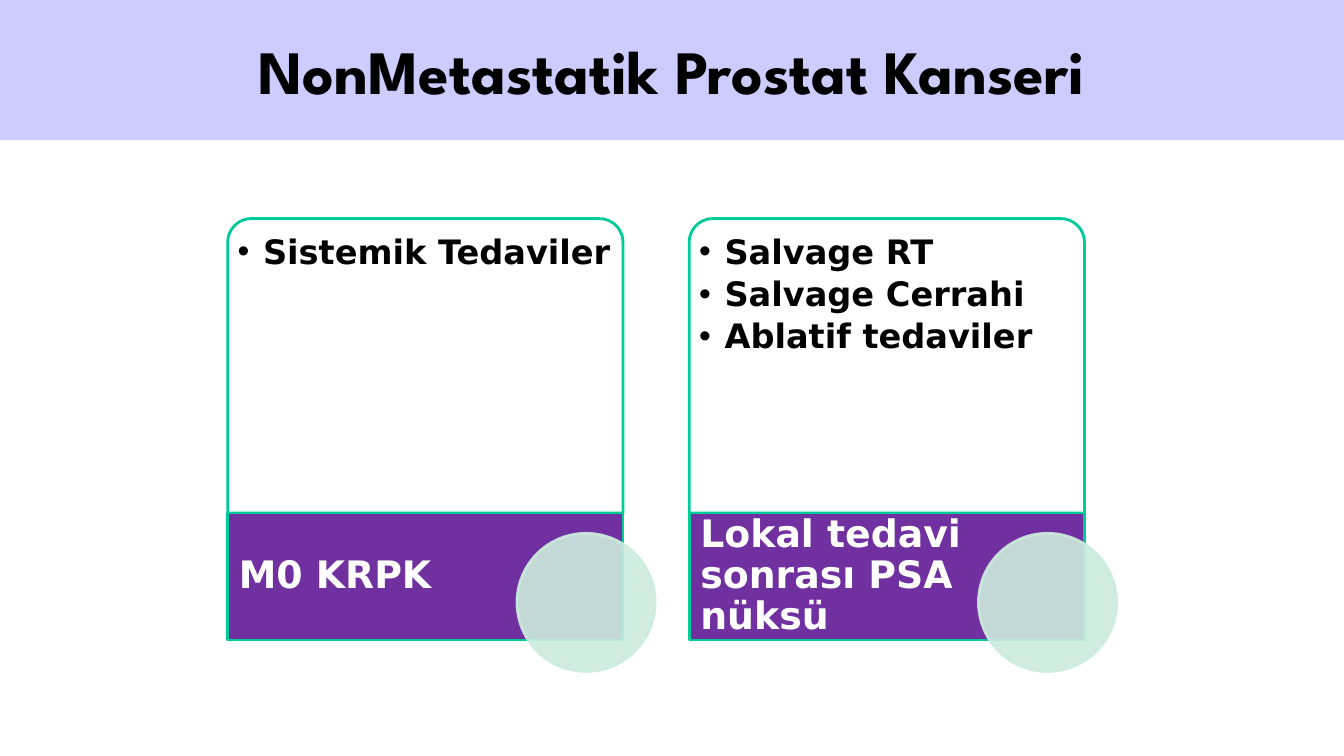
from lxml import etree
from pptx import Presentation
from pptx.dml.color import RGBColor
from pptx.enum.shapes import MSO_SHAPE
from pptx.enum.text import MSO_ANCHOR, PP_ALIGN
from pptx.oxml.ns import qn
from pptx.util import Cm, Pt

RECTANGLE = MSO_SHAPE.RECTANGLE
ROUNDED_TOP = MSO_SHAPE.ROUND_2_SAME_RECTANGLE
CIRCLE = MSO_SHAPE.OVAL
TOP, MIDDLE = MSO_ANCHOR.TOP, MSO_ANCHOR.MIDDLE
LEFT, CENTER = PP_ALIGN.LEFT, PP_ALIGN.CENTER

BLACK = RGBColor(0x00, 0x00, 0x00)
WHITE = RGBColor(0xFF, 0xFF, 0xFF)
LAVENDER = RGBColor(0xCC, 0xCC, 0xFF)
PURPLE = RGBColor(0x70, 0x30, 0xA0)
GREEN = RGBColor(0x00, 0xCC, 0x99)
MINT = RGBColor(0xCC, 0xEC, 0xDE)

TITLE_FONT = "League Spartan"
BODY_FONT = "DejaVu Sans"

# Card geometry in centimetres
FIRST_LEFT, CARD_STEP = 5.74, 11.63
CARD_TOP, CARD_WIDTH, CARD_HEIGHT = 5.51, 9.96, 7.42
LABEL_TOP, LABEL_HEIGHT = CARD_TOP + CARD_HEIGHT, 3.2

CARDS = [
    ("M0 KRPK", ["Sistemik Tedaviler"]),
    ("Lokal tedavi sonrası PSA nüksü",
     ["Salvage RT", "Salvage Cerrahi", "Ablatif tedaviler"]),
]


def set_alpha(fill_parent, percent):
    color = fill_parent.find(qn("a:solidFill"))[0]
    etree.SubElement(color, qn("a:alpha")).set("val", str(percent * 1000))


def add_shape(page, kind, place, fill, line=None):
    shape = page.shapes.add_shape(kind, *map(Cm, place))
    shape.shadow.inherit = False
    shape.fill.solid()
    shape.fill.fore_color.rgb = fill
    if line is None:
        shape.line.fill.background()
    else:
        shape.line.color.rgb = line
        shape.line.width = Pt(2)
    return shape


def set_bullet(para):
    properties = para._p.get_or_add_pPr()
    properties.set("marL", str(Cm(0.64)))
    properties.set("indent", str(-Cm(0.64)))
    etree.SubElement(properties, qn("a:buFont")).set("typeface", "Arial")
    etree.SubElement(properties, qn("a:buChar")).set("char", "•")


def write_text(box, lines, font, size, color, align=LEFT, anchor=TOP,
               insets=(0.25, 0.13, 0.25, 0.13), bullets=False,
               spacing=None, after=0):
    frame = box.text_frame
    frame.word_wrap = True
    frame.vertical_anchor = anchor
    (frame.margin_left, frame.margin_top,
     frame.margin_right, frame.margin_bottom) = map(Cm, insets)
    for index, line in enumerate(lines):
        para = frame.add_paragraph() if index else frame.paragraphs[0]
        para.text = line
        if bullets:
            para.level = 1
            set_bullet(para)
        para.alignment = align
        para.line_spacing = spacing
        para.space_after = Pt(after)
        para.font.name = font
        para.font.size = Pt(size)
        para.font.bold = True
        para.font.color.rgb = color


def add_title(page, title):
    band = add_shape(page, RECTANGLE, (0, 0, 33.87, 3.53), LAVENDER)
    write_text(band, [title], TITLE_FONT, 44, BLACK, CENTER, MIDDLE)


def add_card(page, left, label, treatments):
    # Upper panel with the treatments
    panel = add_shape(page, ROUNDED_TOP,
                      (left, CARD_TOP, CARD_WIDTH, CARD_HEIGHT), WHITE, GREEN)
    panel.adjustments[0] = 0.08
    panel.adjustments[1] = 0
    set_alpha(panel._element.spPr, 90)
    box = page.shapes.add_textbox(Cm(left + 0.17), Cm(CARD_TOP + 0.17),
                                  Cm(9.6), Cm(7.24))
    write_text(box, treatments, BODY_FONT, 24, BLACK, bullets=True,
               insets=(0.08, 0.25, 0.08, 0.08), spacing=0.9, after=4.3)

    # Lower label
    add_shape(page, RECTANGLE,
              (left, LABEL_TOP, CARD_WIDTH, LABEL_HEIGHT), PURPLE, GREEN)
    box = page.shapes.add_textbox(Cm(left), Cm(LABEL_TOP),
                                  Cm(7.01), Cm(LABEL_HEIGHT))
    write_text(box, [label], BODY_FONT, 27, WHITE, anchor=MIDDLE,
               insets=(0.28, 0, 0.1, 0), spacing=0.9)

    # Translucent circle over the corner
    circle = add_shape(page, CIRCLE, (left + 7.29, 13.44, 3.48, 3.48),
                       MINT, MINT)
    properties = circle._element.spPr
    set_alpha(properties, 90)
    set_alpha(properties.find(qn("a:ln")), 90)


def main():
    deck = Presentation()
    deck.slide_width, deck.slide_height = Cm(33.87), Cm(19.05)
    page = deck.slides.add_slide(deck.slide_layouts[6])
    add_title(page, "NonMetastatik Prostat Kanseri")
    for index, (label, treatments) in enumerate(CARDS):
        add_card(page, FIRST_LEFT + index * CARD_STEP, label, treatments)
    deck.save("out.pptx")


if __name__ == "__main__":
    main()
